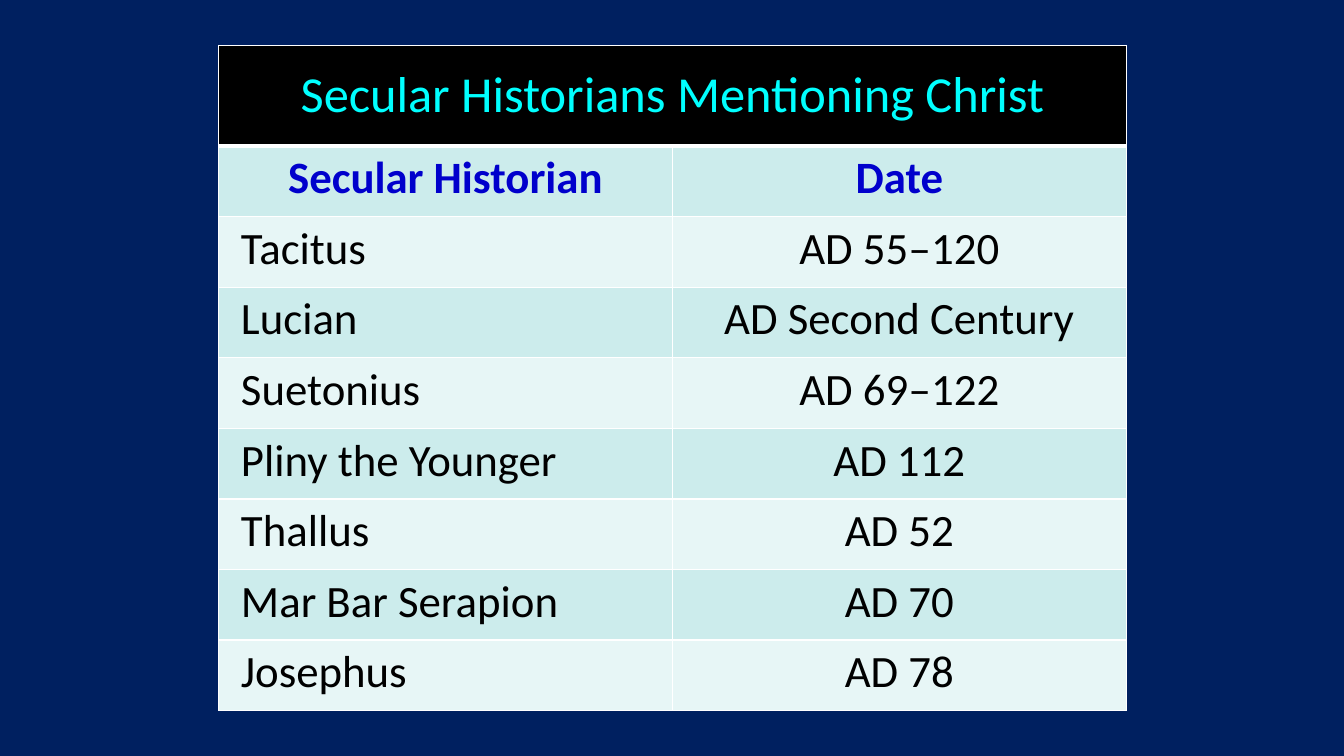
from dataclasses import dataclass

from lxml.etree import SubElement
from pptx import Presentation
from pptx.dml.color import RGBColor
from pptx.enum.text import MSO_ANCHOR, PP_ALIGN
from pptx.oxml.ns import qn
from pptx.util import Pt

EMU_PER_PX = 9144


@dataclass(frozen=True)
class Theme:
    font: str = "Calibri"
    background: str = "002060"
    title_fill: str = "000000"
    title_text: str = "00FFFF"
    header_text: str = "0000CC"
    body_text: str = "000000"
    bands: tuple = ("CCECEC", "E7F6F6")
    border: str = "FFFFFF"
    title_size: int = 36
    body_size: int = 32
    thin: int = 1
    thick: int = 3


THEME = Theme()
TITLE = "Secular Historians Mentioning Christ"
HEADER = ("Secular Historian", "Date")
HISTORIANS = (
    ("Tacitus", "AD 55‒120"),
    ("Lucian", "AD Second Century"),
    ("Suetonius", "AD 69‒122"),
    ("Pliny the Younger", "AD 112"),
    ("Thallus", "AD 52"),
    ("Mar Bar Serapion", "AD 70"),
    ("Josephus", "AD 78"),
)
NAME_INDENT = 12


def px(n):
    return n * EMU_PER_PX


def set_borders(cell, top, bottom):
    tcPr = cell._tc.get_or_add_tcPr()
    widths = {"lnL": THEME.thin, "lnR": THEME.thin, "lnT": top, "lnB": bottom}
    for side, width in widths.items():
        ln = SubElement(tcPr, qn(f"a:{side}"), w=str(Pt(width)))
        fill = SubElement(ln, qn("a:solidFill"))
        SubElement(fill, qn("a:srgbClr"), val=THEME.border)


def fill_cell(cell, color):
    cell.fill.solid()
    cell.fill.fore_color.rgb = RGBColor.from_string(color)


def write_cell(cell, text, size, color, bold=False, indent=0):
    p = cell.text_frame.paragraphs[0]
    if indent:
        p.alignment = PP_ALIGN.LEFT
        pPr = p._p.get_or_add_pPr()
        pPr.set("marL", str(px(indent)))
        pPr.set("indent", "0")
    else:
        p.alignment = PP_ALIGN.CENTER
    r = p.add_run()
    r.text = text
    formats = {"name": THEME.font, "size": Pt(size), "bold": bold}
    for name, value in formats.items():
        setattr(r.font, name, value)
    r.font.color.rgb = RGBColor.from_string(color)


def add_title_row(table):
    for cell in table.rows[0].cells:
        set_borders(cell, THEME.thin, THEME.thick)
        fill_cell(cell, THEME.title_fill)
    title = table.cell(0, 0)
    title.merge(table.cell(0, 1))
    title.vertical_anchor = MSO_ANCHOR.MIDDLE
    write_cell(title, TITLE, THEME.title_size, THEME.title_text)


def add_body_row(table, row, texts):
    is_header = row == 1
    color = THEME.header_text if is_header else THEME.body_text
    top = THEME.thick if is_header else THEME.thin
    for col, text in enumerate(texts):
        cell = table.cell(row, col)
        set_borders(cell, top, THEME.thin)
        fill_cell(cell, THEME.bands[(row - 1) % 2])
        indent = NAME_INDENT if col == 0 and not is_header else 0
        write_cell(cell, text, THEME.body_size, color, is_header, indent)


def add_historian_table(s, left, top, col_width, title_height, row_height):
    body = (HEADER, *HISTORIANS)
    height = title_height + row_height * len(body)
    table = s.shapes.add_table(
        len(body) + 1, len(HEADER),
        px(left), px(top), px(col_width * len(HEADER)), px(height),
    ).table
    for column in table.columns:
        column.width = px(col_width)
    for i, row in enumerate(table.rows):
        row.height = px(row_height if i else title_height)
    add_title_row(table)
    for i, texts in enumerate(body, 1):
        add_body_row(table, i, texts)


def main():
    prs = Presentation()
    prs.slide_width, prs.slide_height = px(1333), px(750)
    s = prs.slides.add_slide(prs.slide_layouts[6])
    s.background.fill.solid()
    s.background.fill.fore_color.rgb = RGBColor.from_string(THEME.background)
    add_historian_table(s, 217, 45, 450, 100, 70)
    prs.save("out.pptx")


if __name__ == "__main__":
    main()
